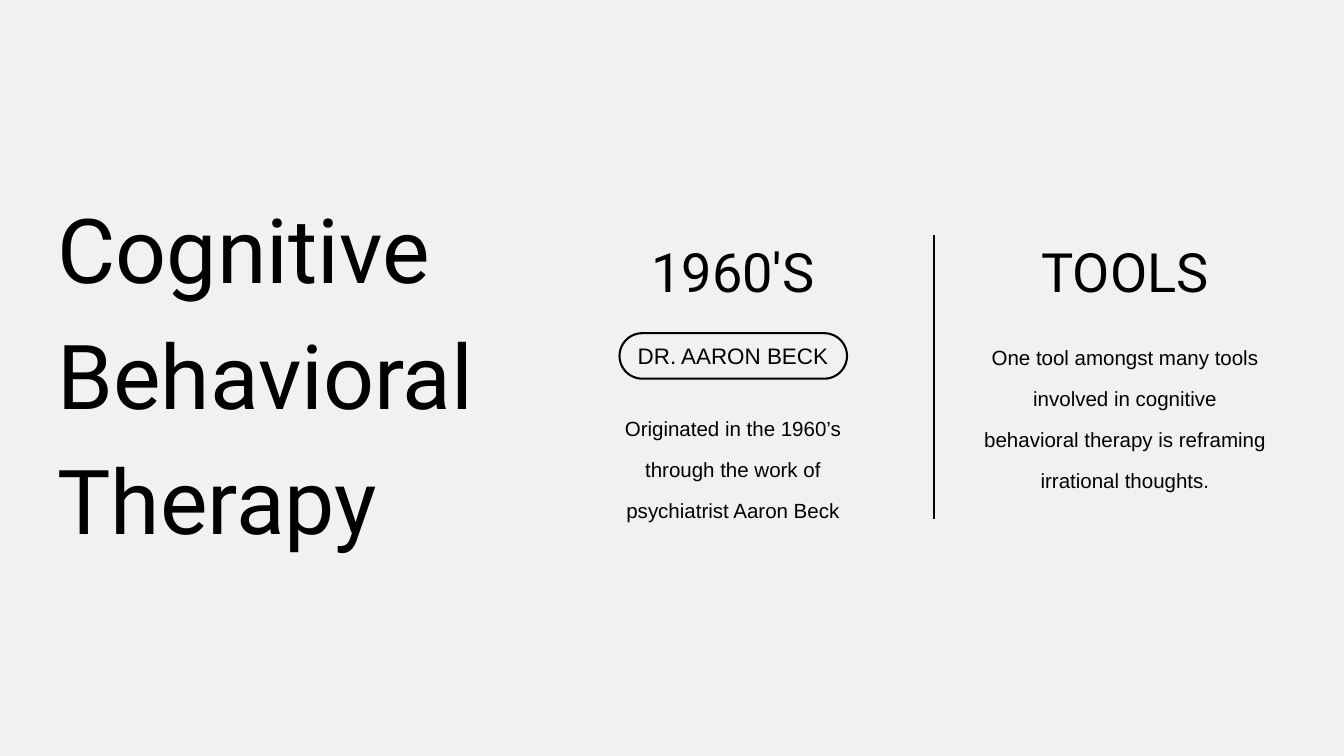
from dataclasses import dataclass

from lxml import etree
from pptx import Presentation
from pptx.dml.color import RGBColor
from pptx.enum import shapes, text
from pptx.oxml.ns import qn
from pptx.util import Emu, Pt

PX = 9525  # EMU per px, 96 px to the inch
INK, PAPER = "000000", "F1F1F1"
LINE_WIDTH = Pt(2.25)
LEFT, CENTER = text.PP_ALIGN.LEFT, text.PP_ALIGN.CENTER


@dataclass
class Style:
    font: str
    size: int
    leading: float
    align: text.PP_ALIGN = CENTER


@dataclass
class Label:
    left: int
    top: int
    width: int
    height: int
    style: Style
    paragraphs: list[str]


TITLE = Style("Roboto", 96, 134.4, LEFT)
HEADING = Style("Roboto", 58, 81.2)
BADGE = Style("Arial", 24, 33.6)
BODY = Style("Arial", 22, 44)

LABELS = [
    Label(82, 252, 804, 532, TITLE, ["Cognitive Behavioral Therapy"]),
    Label(832, 325, 430, 105, HEADING, ["1960'S"]),
    Label(855, 483, 384, 43, BADGE, ["DR. AARON BECK"]),
    Label(883, 571, 328, 170, BODY, [
        "Originated in the 1960’s through the work of",
        "psychiatrist Aaron Beck",
    ]),
    Label(1443, 325, 328, 105, HEADING, ["TOOLS"]),
    Label(1404, 469, 406, 228, BODY, [
        "One tool amongst many tools involved in cognitive",
        "behavioral therapy is reframing irrational thoughts.",
    ]),
]


def px(*lengths: int) -> list[Emu]:
    return [Emu(n * PX) for n in lengths]


def color(hex_code: str) -> RGBColor:
    return RGBColor.from_string(hex_code)


def add_label(s, label: Label) -> None:
    box = px(label.left, label.top, label.width, label.height)
    tf = s.shapes.add_textbox(*box).text_frame
    tf.word_wrap = True
    tf.margin_left = tf.margin_top = tf.margin_right = tf.margin_bottom = 0
    tf.text = "\n".join(label.paragraphs)
    for p in tf.paragraphs:
        p.alignment = label.style.align
        p.line_spacing = Pt(label.style.leading)
        p.font.name = label.style.font
        p.font.size = Pt(label.style.size)
        p.font.color.rgb = color(INK)


def add_pill(s, left: int, top: int, width: int, height: int) -> None:
    sp = s.shapes.add_shape(
        shapes.MSO_SHAPE.ROUNDED_RECTANGLE, *px(left, top, width, height))
    sp.adjustments[0] = 0.5
    sp.shadow.inherit = False
    sp.fill.background()
    sp.line.color.rgb = color(INK)
    sp.line.width = LINE_WIDTH


def add_divider(s, x: int, top: int, bottom: int) -> None:
    line = s.shapes.add_connector(
        shapes.MSO_CONNECTOR.STRAIGHT, *px(x, top, x, bottom))
    line.line.color.rgb = color(INK)
    line.line.width = LINE_WIDTH
    etree.SubElement(line._element.spPr, qn("a:effectLst"))


def main() -> None:
    prs = Presentation()
    prs.slide_width, prs.slide_height = px(1920, 1080)
    s = prs.slides.add_slide(prs.slide_layouts[6])

    # Background
    s.background.fill.solid()
    s.background.fill.fore_color.rgb = color(PAPER)

    # Badge outline and column divider
    add_pill(s, 885, 476, 325, 65)
    add_divider(s, 1334, 336, 741)

    # Title, headings and body text
    for label in LABELS:
        add_label(s, label)

    prs.save("out.pptx")


if __name__ == "__main__":
    main()
